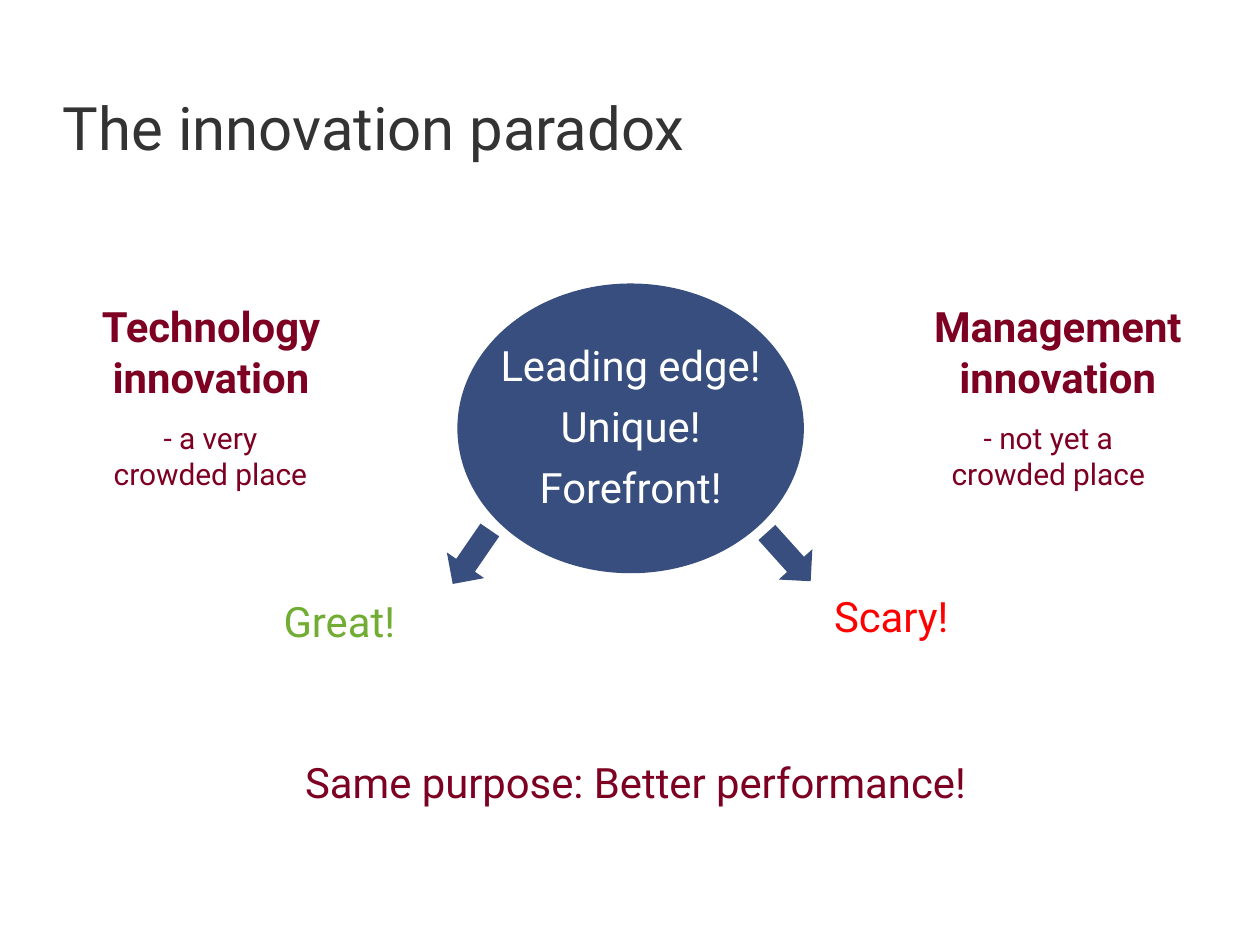
from pptx import Presentation
from pptx.dml.color import RGBColor
from pptx.enum.shapes import MSO_SHAPE
from pptx.enum.text import MSO_ANCHOR, PP_ALIGN
from pptx.util import Inches, Pt

OVAL, ARROW = MSO_SHAPE.OVAL, MSO_SHAPE.RIGHT_ARROW
TOP = MSO_ANCHOR.TOP
LEFT, CENTER = PP_ALIGN.LEFT, PP_ALIGN.CENTER
GREY = RGBColor(0x33, 0x33, 0x33)
BLUE = RGBColor(0x37, 0x4E, 0x7E)
WINE = RGBColor(0x7D, 0x00, 0x23)
GREEN = RGBColor(0x71, 0xAC, 0x33)
RED = RGBColor(0xFF, 0x00, 0x00)
WHITE = RGBColor(0xFF, 0xFF, 0xFF)
HEAD, BODY, NOTE = 34.2, 23.9, 17.1
PAD = (0.1, 0.05, 0.1, 0.05)
BARE = (0, 0, 0, 0)


class Board:
    """Holds the text style and the slide, and draws each kind of element."""

    def __init__(self, slide, font):
        self.slide = slide
        self.font = font

    def text(self, box, lines, color, size=BODY, bold=False, align=CENTER,
             pad=PAD, pitch=1.0, gap=0):
        frame = self.slide.shapes.add_textbox(*map(Inches, box)).text_frame
        frame.word_wrap = True
        frame.vertical_anchor = TOP
        (frame.margin_left, frame.margin_top,
         frame.margin_right, frame.margin_bottom) = map(Inches, pad)
        for i, line in enumerate(lines):
            para = frame.add_paragraph() if i else frame.paragraphs[0]
            para.alignment = align
            para.line_spacing = pitch
            para.space_before = Pt(gap if i else 0)
            run = para.add_run()
            run.text = line
            font = run.font
            font.name, font.size, font.bold = self.font, Pt(size), bold
            font.color.rgb = color

    def shape(self, kind, box, fill, turn=0):
        shape = self.slide.shapes.add_shape(kind, *map(Inches, box))
        shape.shadow.inherit = False
        shape.fill.solid()
        shape.fill.fore_color.rgb = fill
        shape.line.fill.background()
        shape.rotation = turn


def main():
    deck = Presentation()
    deck.slide_width, deck.slide_height = Inches(10), Inches(7.5)
    board = Board(deck.slides.add_slide(deck.slide_layouts[6]), "Roboto")

    board.text((0.5, 0.44, 9, 1.11), ["The innovation paradox"], GREY, HEAD,
               align=LEFT, pad=(0, 0.28, 0, 0.16))
    board.shape(OVAL, (3.63, 2.25, 2.75, 2.3), BLUE)
    board.text((3.63, 2.72, 2.75, 1.47),
               ["Leading edge!", "Unique!", "Forefront!"], WHITE,
               pitch=0.8, gap=12)

    for left, width, name in ((0.64, 2.07, "Technology innovation"),
                              (7.29, 2.21, "Management innovation")):
        board.text((left, 2.34, width, 0.66), [name], WINE, bold=True)
    for left, width, note in ((0.74, 1.86, "- a very crowded place"),
                              (7.28, 2.08, "- not yet a crowded place")):
        board.text((left, 3.28, width, 0.68), [note], WINE, NOTE)

    for left, turn in ((3.48, 124.5), (6, 48)):
        board.shape(ARROW, (left, 4.24, 0.52, 0.36), BLUE, turn)
    for box, word, color in (((2.25, 4.69, 1.38, 0.44), "Great!", GREEN),
                             ((6.62, 4.65, 1.26, 0.44), "Scary!", RED)):
        board.text(box, [word], color, align=LEFT, pad=BARE, pitch=1.1)

    board.text((1.77, 5.96, 6.55, 0.5),
               ["Same purpose: Better performance!"], WINE)
    deck.save("out.pptx")


if __name__ == "__main__":
    main()
